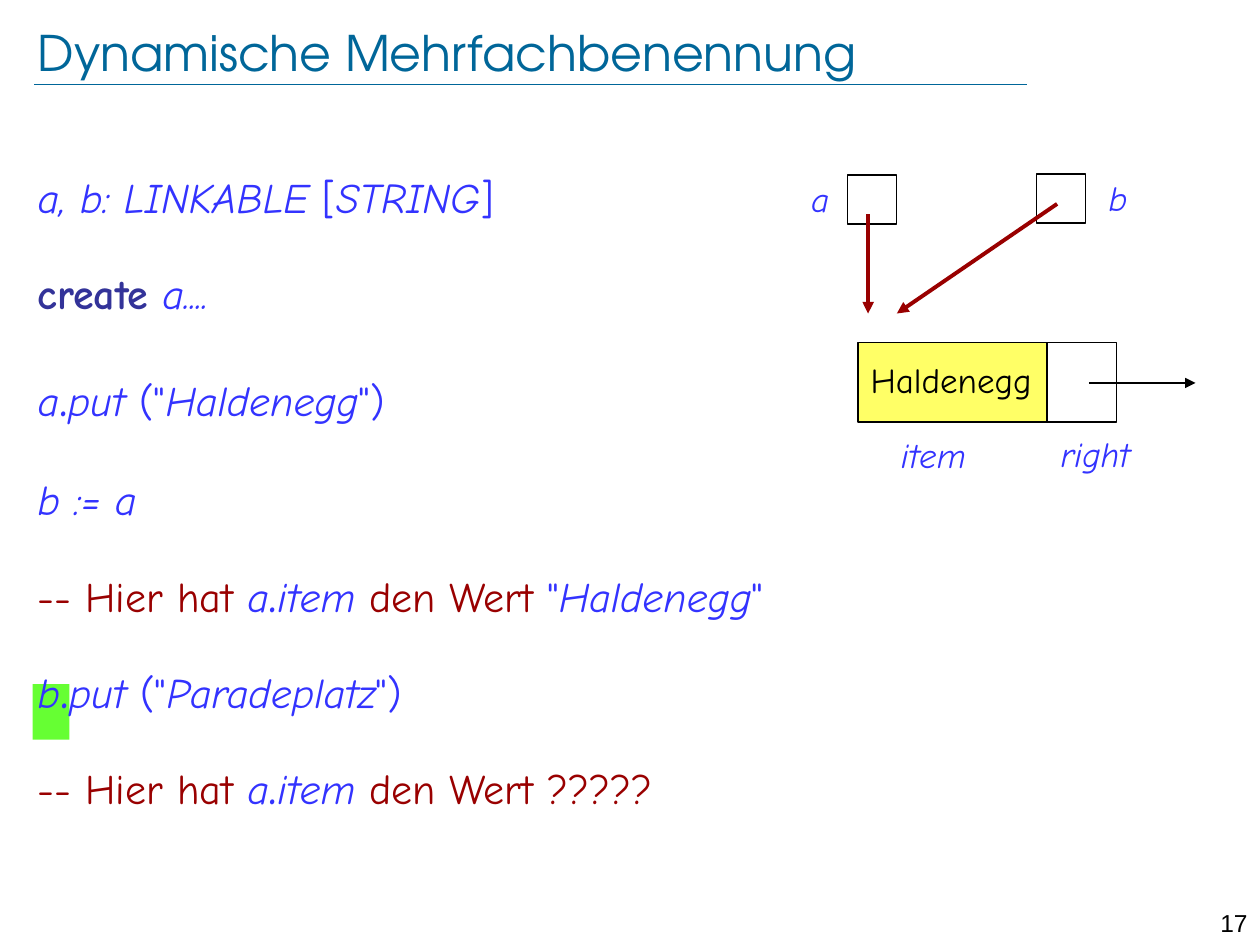
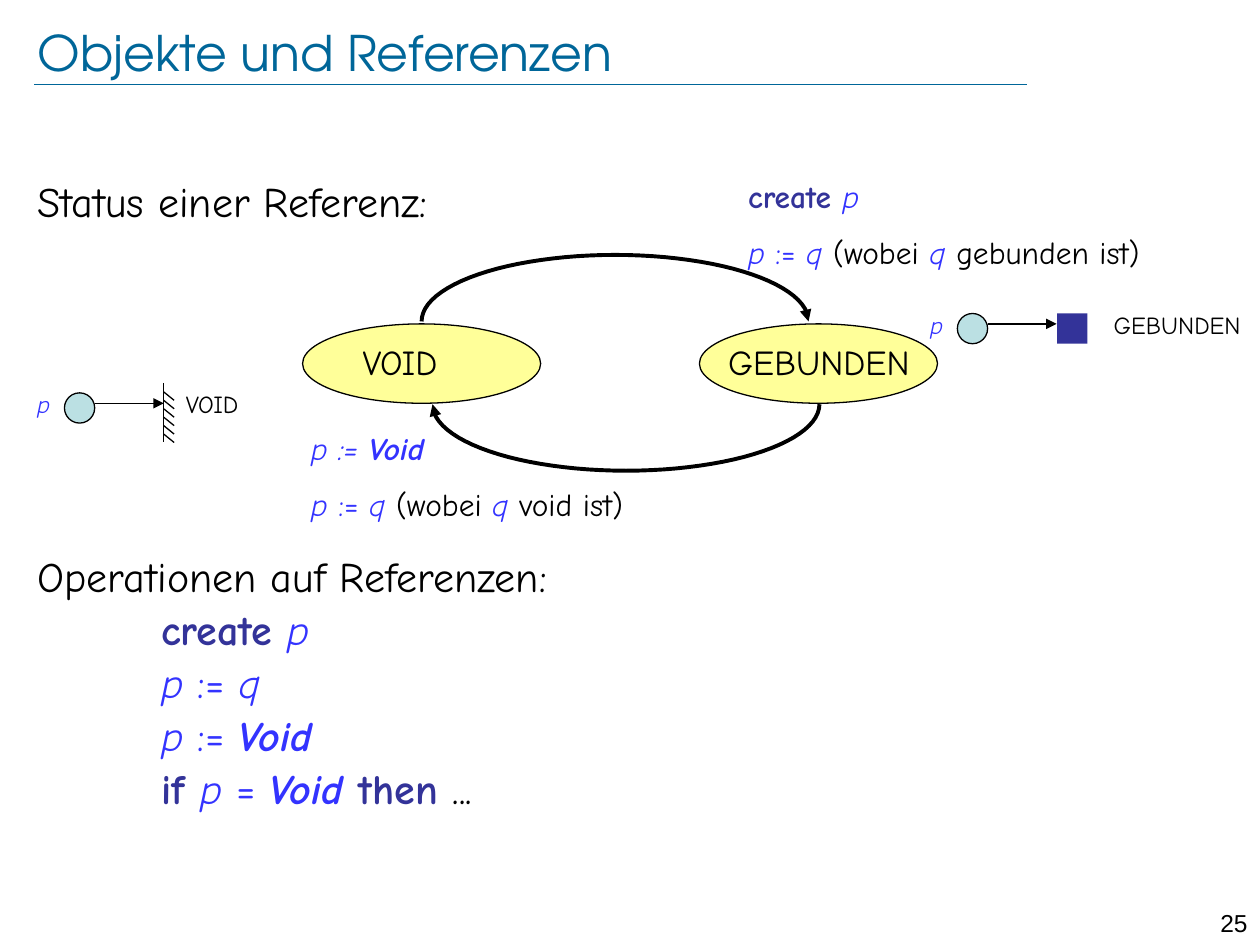
from math import cos, pi, sin

from lxml.etree import SubElement
from pptx import Presentation
from pptx.dml.color import RGBColor
from pptx.enum.shapes import MSO_CONNECTOR, MSO_SHAPE
from pptx.enum.text import MSO_ANCHOR, PP_ALIGN
from pptx.oxml.ns import qn
from pptx.util import Cm, Pt

BLACK = "000000"
TEAL = "006699"
BLUE = "3333FF"
NAVY = "333399"
RED = "990000"

# Run styles of the program notation
PLAIN = {"color": BLACK}
CODE = {"color": BLUE, "italic": True}
SYMBOL = {"color": BLUE}
DOT = {"color": BLUE, "size": 32}
KEYWORD = {"color": NAVY, "bold": True}
CONSTANT = {"color": BLUE, "bold": True, "italic": True}
REMARK = {"color": RED}


def add_text(slide, text, left, top, width, height=1.12, *, size=20, font="Comic Neue",
             style=PLAIN, align=PP_ALIGN.LEFT, line_spacing=1.0, space_before=0,
             anchor=MSO_ANCHOR.TOP, margins=None):
    """Text is a string, or a list of paragraphs that are lists of (words, style)."""
    frame = slide.shapes.add_textbox(Cm(left), Cm(top), Cm(width), Cm(height)).text_frame
    frame.word_wrap = True
    frame.vertical_anchor = anchor
    if margins is not None:
        frame.margin_left = frame.margin_right = Cm(margins)
        frame.margin_top = frame.margin_bottom = Cm(margins)
    paragraphs = [[(text, style)]] if isinstance(text, str) else text
    for index, runs in enumerate(paragraphs):
        paragraph = frame.add_paragraph() if index else frame.paragraphs[0]
        paragraph.alignment = align
        paragraph.line_spacing = line_spacing
        paragraph.space_before = Pt(space_before if index else 0)
        for words, look in runs:
            run = paragraph.add_run()
            run.text = words
            run.font.name = font
            run.font.size = Pt(look.get("size", size))
            run.font.bold = look.get("bold", False)
            run.font.italic = look.get("italic", False)
            run.font.color.rgb = RGBColor.from_string(look["color"])
    return frame


def paint(shape, fill=None, line=BLACK, width=0.75, arrow=False):
    """Set fill, outline and arrowhead of a shape or connector, without shadow."""
    if fill:
        shape.fill.solid()
        shape.fill.fore_color.rgb = RGBColor.from_string(fill)
    elif hasattr(shape, "fill"):
        shape.fill.background()
    if line:
        shape.line.color.rgb = RGBColor.from_string(line)
        shape.line.width = Pt(width)
    else:
        shape.line.fill.background()
    if arrow:
        SubElement(shape.line._get_or_add_ln(), qn("a:tailEnd"), type="triangle")
    SubElement(shape._element.spPr, qn("a:effectLst"))


prs = Presentation()
prs.slide_width, prs.slide_height = Cm(25.4), Cm(19.05)

# Title, rule and page number of every slide
slides = []
for title, page in [("Dynamische Mehrfachbenennung", "17"), ("Objekte und Referenzen", "25")]:
    slide = prs.slides.add_slide(prs.slide_layouts[6])
    rule = slide.shapes.add_connector(MSO_CONNECTOR.STRAIGHT, Cm(0.69), Cm(1.7), Cm(20.7), Cm(1.7))
    paint(rule, line=TEAL, width=0.25)
    add_text(slide, page, 24, 18.19, 1.4, 0.61, size=14, font="Arial", align=PP_ALIGN.RIGHT)
    add_text(slide, title, 0.76, 0.46, 22.75, 1.18, size=28, font="TeX Gyre Adventor",
             style={"color": TEAL}, anchor=MSO_ANCHOR.MIDDLE, margins=0)
    slides.append(slide)
aliasing, references = slides

# Slide 1: two names for one object
highlight = aliasing.shapes.add_shape(MSO_SHAPE.RECTANGLE, Cm(0.66), Cm(13.79), Cm(0.74), Cm(1.12))
paint(highlight, fill="66FF33", line=None)

a_item = [("-- Hier hat ", REMARK), ("a", CODE), (".", DOT), ("item ", CODE)]
program = add_text(aliasing, [
    [("a, b: LINKABLE ", CODE), ("[", SYMBOL), ("STRING", CODE), ("]", SYMBOL)],
    [("create", KEYWORD), (" a....", CODE)],
    [("a", CODE), (".", DOT), ("put ", CODE), ('("', SYMBOL), ("Haldenegg", CODE), ('")', SYMBOL)],
    [("b := a", CODE)],
    a_item + [("den Wert ", REMARK), ('"', SYMBOL), ("Haldenegg", CODE), ('"', SYMBOL)],
    [("b", CODE), (".", DOT), ("put ", CODE), ('("', SYMBOL), ("Paradeplatz", CODE), ('")', SYMBOL)],
    a_item + [("den Wert ?????", REMARK)],
], 0.51, 3.53, 24.21, 14, size=24, line_spacing=0.8, space_before=32)
for paragraph in program.paragraphs[4:]:
    paragraph.line_spacing = 0.6

for left, top, width, height, fill in [
    (17.3, 6.91, 3.81, 1.6, "FFFF66"),
    (21.11, 6.91, 1.4, 1.6, None),
    (17.09, 3.53, 0.99, 0.99, None),
    (20.9, 3.51, 0.99, 0.99, None),
]:
    cell = aliasing.shapes.add_shape(MSO_SHAPE.RECTANGLE, Cm(left), Cm(top), Cm(width), Cm(height))
    paint(cell, fill=fill)

add_text(aliasing, "Haldenegg", 17.3, 7.11, 4)
for label, left, top in [("item", 17.91, 8.61), ("right", 21.13, 8.59),
                         ("a", 16.1, 3.45), ("b", 22.1, 3.43)]:
    add_text(aliasing, label, left, top, 2.4, style=CODE)

for x1, y1, x2, y2, color, width in [
    (21.95, 7.72, 24.1, 7.72, BLACK, 0.75),
    (17.5, 4.32, 17.5, 6.32, RED, 2.25),
    (21.31, 4.11, 18.08, 6.32, RED, 2.25),
]:
    pointer = aliasing.shapes.add_connector(MSO_CONNECTOR.STRAIGHT, Cm(x1), Cm(y1), Cm(x2), Cm(y2))
    paint(pointer, line=color, width=width, arrow=True)

# Slide 2: states of a reference and operations on it
assign_q = [("p", CODE), (" := ", SYMBOL), ("q", CODE)]
operations = add_text(references, [
    [("Status einer Referenz:", PLAIN)],
    [("Operationen auf Referenzen:", PLAIN)],
    [("create ", KEYWORD), ("p", CODE)],
    assign_q,
    [("p", CODE), (" := ", SYMBOL), ("Void", CONSTANT)],
    [("if ", KEYWORD), ("p", CODE), (" = ", SYMBOL), ("Void ", CONSTANT),
     ("then ", KEYWORD), ("...", PLAIN)],
], 0.51, 3.53, 24.21, 14.2, size=24, line_spacing=0.9, space_before=4.3)
operations.paragraphs[1].space_before = Pt(188.5)
for paragraph in operations.paragraphs[2:]:
    paragraph._p.get_or_add_pPr().set("marL", str(Cm(2.49)))

for state, left, text_left in [("VOID", 6.1, 7.06), ("GEBUNDEN", 14.1, 14.43)]:
    bubble = references.shapes.add_shape(MSO_SHAPE.OVAL, Cm(left), Cm(6.53), Cm(4.8), Cm(1.6))
    paint(bubble, fill="FFFF99")
    add_text(references, state, text_left, 6.73, 4.6)

# Half ellipses, clockwise: over the top from VOID, then back underneath
STEPS = 48
for center_x, center_y, start in [(12.4, 6.48, pi), (12.62, 8.15, 0)]:
    angles = [start - pi * step / STEPS for step in range(STEPS + 1)]
    points = [(Cm(center_x + 3.9 * cos(angle)), Cm(center_y - 1.34 * sin(angle)))
              for angle in angles]
    builder = references.shapes.build_freeform(*points[0])
    builder.add_line_segments(points[1:], close=False)
    paint(builder.convert_to_shape(), width=2.25, arrow=True)

for left, top, first_step, condition in [
    (14.83, 3.45, [("create ", KEYWORD), ("p", CODE)], " gebunden ist)"),
    (6.02, 8.53, [("p := ", CODE), ("Void", CONSTANT)], " void ist)"),
]:
    second_step = assign_q + [(" (wobei ", PLAIN), ("q", CODE), (condition, PLAIN)]
    add_text(references, [first_step, second_step], left, top, 10.2, 2.16,
             size=18, space_before=10)

# Small pictograms: a reference p pointing to its target
for state, left, top, state_left in [("GEBUNDEN", 19.3, 6.32, 22.2), ("VOID", 1.3, 7.92, 3.5)]:
    reference = references.shapes.add_shape(MSO_SHAPE.OVAL, Cm(left), Cm(top), Cm(0.61), Cm(0.61))
    paint(reference, fill="BBE0E3")
    link = references.shapes.add_connector(
        MSO_CONNECTOR.STRAIGHT, Cm(left + 0.61), Cm(top + 0.21), Cm(left + 2), Cm(top + 0.21))
    paint(link, arrow=True)
    add_text(references, "p", left - 0.8, top - 0.2, 0.81, 0.86, size=14, style=CODE)
    add_text(references, state, state_left, top - 0.2, 3.2, 0.86, size=14)

target = references.shapes.add_shape(MSO_SHAPE.RECTANGLE, Cm(21.31), Cm(6.32), Cm(0.61), Cm(0.61))
paint(target, fill=NAVY, line=None)

wall = [(3.3, 7.72, 3.3, 8.92)]
wall += [(3.3, 7.9 + 0.17 * tick, 3.51, 8.07 + 0.17 * tick) for tick in range(6)]
for x1, y1, x2, y2 in wall:
    paint(references.shapes.add_connector(MSO_CONNECTOR.STRAIGHT, Cm(x1), Cm(y1), Cm(x2), Cm(y2)))

prs.save("out.pptx")
